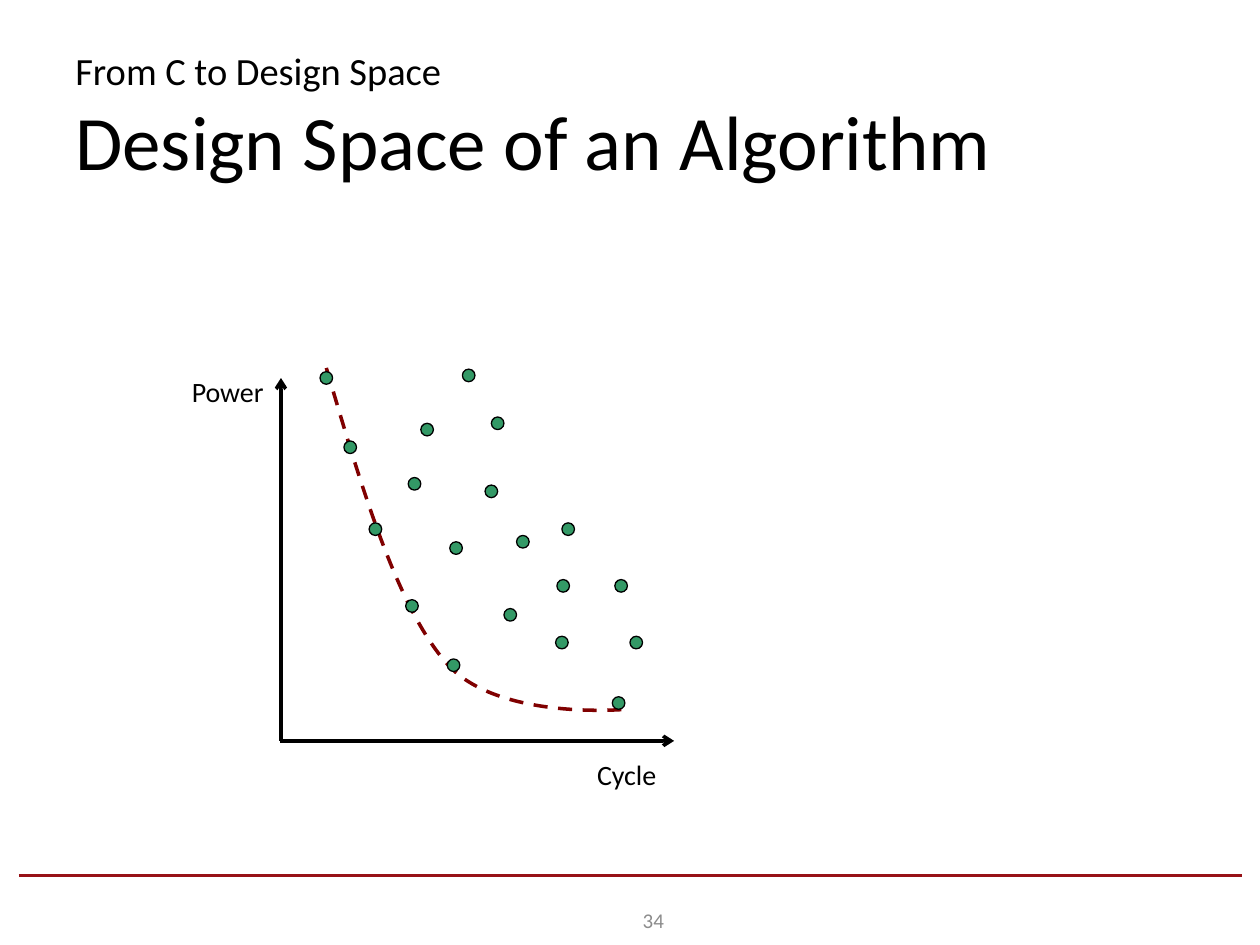
from dataclasses import dataclass
from typing import NamedTuple

import pptx
import pptx.dml.color
import pptx.enum.dml
import pptx.enum.shapes
import pptx.enum.text
import pptx.oxml
import pptx.oxml.ns
import pptx.util
from pptx.util import Inches

Align = pptx.enum.text.PP_ALIGN
Anchor = pptx.enum.text.MSO_ANCHOR


@dataclass(frozen=True)
class Theme:
    font: str = "Calibri"
    ink: str = "000000"
    muted: str = "8C8C8C"
    rule: str = "971217"
    frontier: str = "800000"
    design: str = "339966"
    kicker_size: int = 22
    title_size: int = 44
    label_size: int = 16
    number_size: int = 12
    line_width: float = 2
    dot_line_width: float = 0.75
    dot_diameter: float = 0.1


class Point(NamedTuple):
    x: float
    y: float


class Run(NamedTuple):
    text: str
    size: int
    color: str = "000000"


class Label(NamedTuple):
    """Runs are separated by line breaks."""
    runs: tuple[Run, ...]
    left: float
    top: float
    width: float
    height: float
    align: Align = Align.LEFT
    anchor: Anchor = Anchor.TOP


class Stroke(NamedTuple):
    start: Point
    end: Point
    color: str
    arrow: bool = False


class Curve(NamedTuple):
    """A cubic segment that goes on from the previous point."""
    control_1: Point
    control_2: Point
    end: Point


THEME = Theme()

LABELS = (
    Label((Run("From C to Design Space", THEME.kicker_size),
           Run("Design Space of an Algorithm", THEME.title_size)),
          0.5, 0.3, 9, 1.25, anchor=Anchor.MIDDLE),
    Label((Run("Cycle", THEME.label_size),), 4.64, 5.96, 0.98, 0.37),
    Label((Run("Power", THEME.label_size),), 1.34, 2.92, 0.85, 0.37, Align.RIGHT),
    Label((Run("34", THEME.number_size, THEME.muted),),
          4.02, 7.1, 2.33, 0.4, Align.CENTER, Anchor.MIDDLE),
)

FOOTER_RULE = Stroke(Point(0.15, 6.95), Point(9.86, 6.95), THEME.rule)
AXES = (
    Stroke(Point(2.22, 5.88), Point(5.35, 5.88), THEME.ink, arrow=True),
    Stroke(Point(2.23, 5.88), Point(2.23, 3), THEME.ink, arrow=True),
)

FRONTIER_START = Point(2.59, 2.92)
FRONTIER = (
    Curve(Point(2.87, 3.87), Point(3.15, 4.82), Point(3.55, 5.27)),
    Curve(Point(3.95, 5.72), Point(4.96, 5.63), Point(4.96, 5.63)),
)

# Top left corners of the dots
DESIGNS = tuple(Point(x, y) for x, y in (
    (2.93, 4.15), (2.73, 3.5), (3.55, 5.23), (3.24, 3.79), (4.86, 5.53),
    (4.46, 4.15), (3.9, 3.31), (3.57, 4.3), (3.22, 4.76), (3.85, 3.85),
    (4.41, 5.05), (4, 4.83), (5, 5.05), (3.34, 3.36), (4.1, 4.25),
    (2.54, 2.95), (4.88, 4.6), (3.67, 2.93), (4.42, 4.6),
))


def set_attributes(target: object, values: dict) -> None:
    for name, value in values.items():
        setattr(target, name, value)


def rgb(color: str) -> pptx.dml.color.RGBColor:
    return pptx.dml.color.RGBColor.from_string(color)


def format_line(line, color: str, width: float) -> None:
    line.color.rgb = rgb(color)
    line.width = pptx.util.Pt(width)


def add_label(slide, label: Label) -> None:
    box = slide.shapes.add_textbox(
        *map(Inches, (label.left, label.top, label.width, label.height)))
    set_attributes(box.text_frame,
                   {"word_wrap": True, "vertical_anchor": label.anchor})
    paragraph = box.text_frame.paragraphs[0]
    paragraph.alignment = label.align
    for index, item in enumerate(label.runs):
        if index:
            paragraph.add_line_break()
        run = paragraph.add_run()
        run.text = item.text
        set_attributes(run.font, {"name": THEME.font,
                                  "size": pptx.util.Pt(item.size)})
        run.font.color.rgb = rgb(item.color)


def add_stroke(slide, stroke: Stroke) -> None:
    connector = slide.shapes.add_connector(
        pptx.enum.shapes.MSO_CONNECTOR.STRAIGHT,
        *map(Inches, (*stroke.start, *stroke.end)))
    format_line(connector.line, stroke.color, THEME.line_width)
    if stroke.arrow:
        outline = connector.line._get_or_add_ln()
        outline.append(pptx.oxml.parse_xml(
            f'<a:tailEnd {pptx.oxml.ns.nsdecls("a")} type="arrow"/>'))
    properties = connector._element.spPr
    properties.append(pptx.oxml.parse_xml(
        f'<a:effectLst {pptx.oxml.ns.nsdecls("a")}/>'))


def add_frontier(slide, start: Point, curves: tuple[Curve, ...]) -> None:
    """Draw the segments between end points, then bend each into a cubic."""
    builder = slide.shapes.build_freeform(*map(Inches, start))
    builder.add_line_segments(
        [tuple(map(Inches, curve.end)) for curve in curves], close=False)
    shape = builder.convert_to_shape()
    lines = shape._element.findall(".//" + pptx.oxml.ns.qn("a:lnTo"))
    for line, curve in zip(lines, curves):
        points = "".join(
            f'<a:pt x="{Inches(point.x) - shape.left}"'
            f' y="{Inches(point.y) - shape.top}"/>' for point in curve)
        line.getparent().replace(line, pptx.oxml.parse_xml(
            f'<a:cubicBezTo {pptx.oxml.ns.nsdecls("a")}>{points}</a:cubicBezTo>'))
    shape.shadow.inherit = False
    shape.fill.background()
    format_line(shape.line, THEME.frontier, THEME.line_width)
    shape.line.dash_style = pptx.enum.dml.MSO_LINE.DASH


def add_design(slide, corner: Point) -> None:
    diameter = Inches(THEME.dot_diameter)
    dot = slide.shapes.add_shape(pptx.enum.shapes.MSO_SHAPE.OVAL,
                                 *map(Inches, corner), diameter, diameter)
    dot.shadow.inherit = False
    dot.fill.solid()
    dot.fill.fore_color.rgb = rgb(THEME.design)
    format_line(dot.line, THEME.ink, THEME.dot_line_width)


def main() -> None:
    presentation = pptx.Presentation()
    set_attributes(presentation, {"slide_width": Inches(10),
                                  "slide_height": Inches(7.5)})
    slide = presentation.slides.add_slide(presentation.slide_layouts[6])
    add_stroke(slide, FOOTER_RULE)
    add_frontier(slide, FRONTIER_START, FRONTIER)
    for axis in AXES:
        add_stroke(slide, axis)
    for label in LABELS:
        add_label(slide, label)
    for corner in DESIGNS:
        add_design(slide, corner)
    presentation.save("out.pptx")


if __name__ == "__main__":
    main()
